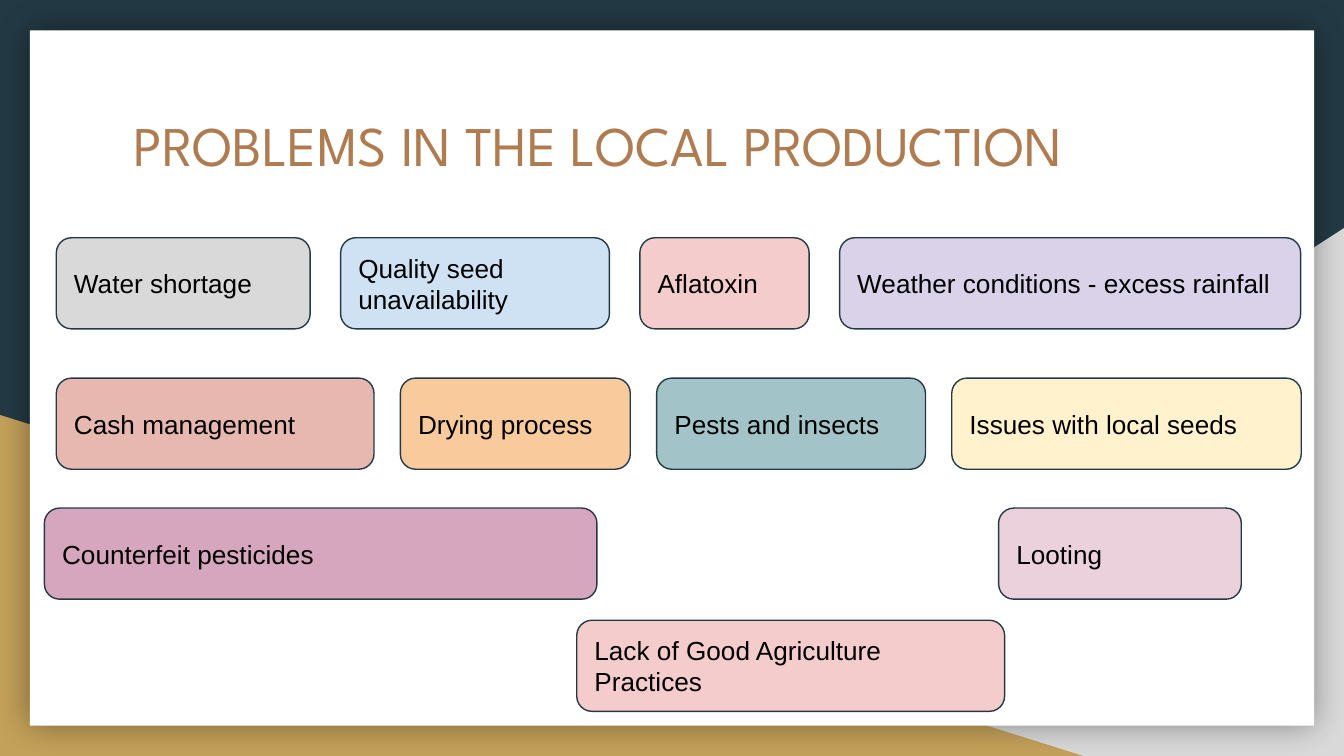
"""Build the slide on problems in the local production."""
from lxml import etree
from pptx import Presentation
from pptx.dml.color import RGBColor
from pptx.enum.shapes import MSO_SHAPE
from pptx.enum.text import MSO_ANCHOR, PP_ALIGN
from pptx.oxml.ns import qn
from pptx.util import Pt

RECT = MSO_SHAPE.RECTANGLE
WEDGE = MSO_SHAPE.RIGHT_TRIANGLE
CARD = MSO_SHAPE.FLOWCHART_ALTERNATE_PROCESS
MIDDLE = MSO_ANCHOR.MIDDLE
TOP = MSO_ANCHOR.TOP
LEFT = PP_ALIGN.LEFT

NAVY = "233A44"
HIGH = 48.8
PAD = 7.2

# Each row: left, top, gap, cards of (text, width, fill)
ROWS = [
    (30.2, 127.4, 16.3, [
        ("Water shortage", 136, "D9D9D9"),
        ("Quality seed unavailability", 144, "CFE2F3"),
        ("Aflatoxin", 90.7, "F4CCCC"),
        ("Weather conditions - excess rainfall", 247, "D9D2E9"),
    ]),
    (30.2, 202.6, 14.1, [
        ("Cash management", 170.2, "E6B8AF"),
        ("Drying process", 123.2, "F9CB9C"),
        ("Pests and insects", 144, "A2C4C9"),
        ("Issues with local seeds", 187.2, "FFF2CC"),
    ]),
    (23.8, 272.2, 215.2, [
        ("Counterfeit pesticides", 296, "D5A6BD"),
        ("Looting", 130, "EAD1DC"),
    ]),
    (309, 332.3, 0, [
        ("Lack of Good Agriculture Practices", 229.2, "F4CCCC"),
    ]),
]


def tint(code):
    """Turn a hex string into a colour."""
    return RGBColor.from_string(code)


def add_block(slide, kind, box, fill, line=None):
    """Add a filled preset shape, outlined if a line colour is given."""
    shape = slide.shapes.add_shape(kind, *map(Pt, box))
    shape.shadow.inherit = False
    shape.fill.solid()
    shape.fill.fore_color.rgb = tint(fill)
    if line:
        shape.line.color.rgb = tint(line)
        shape.line.width = Pt(0.75)
    else:
        shape.line.fill.background()
    return shape


def add_glow(shape, blur, alpha):
    """Give a shape a soft black shadow on all sides."""
    effects = shape._element.spPr.find(qn("a:effectLst"))
    outer = etree.SubElement(effects, qn("a:outerShdw"), blurRad=str(Pt(blur)),
                             dist="0", dir="0", algn="ctr", rotWithShape="0")
    color = etree.SubElement(outer, qn("a:srgbClr"), val="000000")
    etree.SubElement(color, qn("a:alpha"), val=str(alpha * 1000))


def set_text(shape, text, font, size, color, anchor):
    """Write left-aligned, wrapped text into a shape."""
    frame = shape.text_frame
    frame.text = text
    frame.word_wrap = True
    frame.vertical_anchor = anchor
    frame.margin_left = frame.margin_right = Pt(PAD)
    frame.margin_top = frame.margin_bottom = Pt(PAD)
    para = frame.paragraphs[0]
    para.alignment = LEFT
    style = para.runs[0].font
    style.name = font
    style.size = Pt(size)
    style.color.rgb = tint(color)


def add_scene(slide):
    """Add the background, corner wedges and white panel."""
    back = slide.background.fill
    back.solid()
    back.fore_color.rgb = tint(NAVY)
    grey = add_block(slide, WEDGE, (282.2, 122.2, 437.8, 282.8), "D9D9D9")
    grey._element.spPr.get_or_add_xfrm().set("flipH", "1")
    add_block(slide, WEDGE, (0, 222.3, 580.3, 182.7), "C4A15A")
    panel = add_block(slide, RECT, (16, 16.2, 688, 372.5), "FFFFFF")
    add_glow(panel, 18, 40)


def add_title(slide, text):
    """Add the slide heading."""
    box = slide.shapes.add_textbox(Pt(64.6), Pt(52), Pt(591), Pt(75))
    set_text(box, text, "League Spartan", 30, "AF7B51", TOP)


def add_row(slide, left, top, gap, cards):
    """Add cards from left to right with equal gaps."""
    for text, width, fill in cards:
        card = add_block(slide, CARD, (left, top, width, HIGH), fill, NAVY)
        set_text(card, text, "Arial", 14, "000000", MIDDLE)
        left += width + gap


def main():
    """Build and save the slide."""
    deck = Presentation()
    deck.slide_width = Pt(720)
    deck.slide_height = Pt(405)
    slide = deck.slides.add_slide(deck.slide_layouts[6])
    add_scene(slide)
    add_title(slide, "PROBLEMS IN THE LOCAL PRODUCTION")
    for row in ROWS:
        add_row(slide, *row)
    deck.save("out.pptx")


if __name__ == "__main__":
    main()
